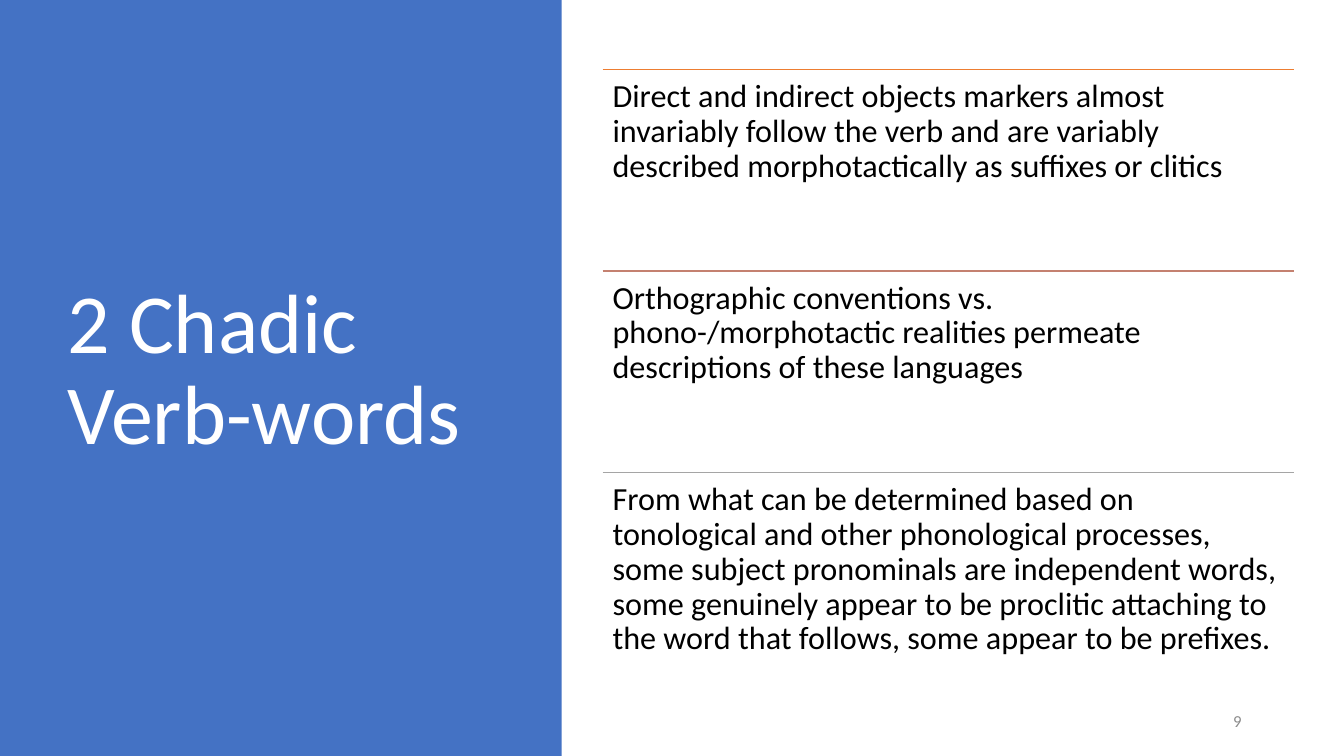
from dataclasses import dataclass

from lxml.etree import SubElement
from pptx import Presentation
from pptx.dml.color import RGBColor
from pptx.enum.shapes import MSO_CONNECTOR, MSO_SHAPE
from pptx.enum.text import MSO_ANCHOR, PP_ALIGN
from pptx.oxml.ns import qn
from pptx.slide import Slide
from pptx.util import Emu, Pt

EMU_PER_PX = 9525  # 96 px to the inch
SLIDE_W, SLIDE_H = 1280, 720

BLUE = RGBColor(0x44, 0x72, 0xC4)
ORANGE = RGBColor(0xED, 0x7D, 0x31)
CLAY = RGBColor(0xC4, 0x81, 0x70)
GREY = RGBColor(0xA5, 0xA5, 0xA5)
NUMBER_GREY = RGBColor(0x8C, 0x8C, 0x8C)
WHITE = RGBColor(0xFF, 0xFF, 0xFF)
BLACK = RGBColor(0x00, 0x00, 0x00)

PANEL_W = 535
POINT_X, POINT_Y, POINT_W, POINT_H = 574, 66, 658, 192


@dataclass
class Box:
    x: int
    y: int
    w: int
    h: int


@dataclass
class Style:
    size: int
    color: RGBColor
    frame: dict
    paragraph: dict


@dataclass
class Point:
    rule_color: RGBColor
    text: str


def px(n: int) -> Emu:
    return Emu(n * EMU_PER_PX)


TITLE = Style(60, WHITE, {"vertical_anchor": MSO_ANCHOR.MIDDLE},
              {"line_spacing": 0.9})
NUMBER = Style(12, NUMBER_GREY, {"vertical_anchor": MSO_ANCHOR.MIDDLE},
               {"alignment": PP_ALIGN.RIGHT, "space_after": Pt(6)})
BODY = Style(23, BLACK,
             {"vertical_anchor": MSO_ANCHOR.TOP,
              "margin_top": px(10), "margin_bottom": px(10)},
             {"line_spacing": 0.9, "space_after": Pt(8)})

POINTS = [
    Point(ORANGE, "Direct and indirect objects markers almost invariably follow "
                  "the verb and are variably described morphotactically as "
                  "suffixes or clitics"),
    Point(CLAY, "Orthographic conventions vs. phono-/morphotactic realities "
                "permeate descriptions of these languages"),
    Point(GREY, "From what can be determined based on tonological and other "
                "phonological processes, some subject pronominals are "
                "independent words, some genuinely appear to be proclitic "
                "attaching to the word that follows, some appear to be prefixes."),
]


def apply(target: object, values: dict) -> None:
    for name, value in values.items():
        setattr(target, name, value)


def add_text(s: Slide, box: Box, text: str, style: Style) -> None:
    sp = s.shapes.add_textbox(px(box.x), px(box.y), px(box.w), px(box.h))
    tf = sp.text_frame
    apply(tf, {"word_wrap": True, **style.frame})
    p = tf.paragraphs[0]
    apply(p, style.paragraph)
    r = p.add_run()
    r.text = text
    apply(r.font, {"name": "Calibri", "size": Pt(style.size)})
    r.font.color.rgb = style.color


def add_rule(s: Slide, x: int, y: int, w: int, color: RGBColor) -> None:
    line = s.shapes.add_connector(
        MSO_CONNECTOR.STRAIGHT, px(x), px(y), px(x + w), px(y))
    line.line.color.rgb = color
    line.line.width = Pt(1)
    SubElement(line._element.spPr, qn("a:effectLst"))


def add_panel(s: Slide, box: Box, color: RGBColor) -> None:
    sp = s.shapes.add_shape(
        MSO_SHAPE.RECTANGLE, px(box.x), px(box.y), px(box.w), px(box.h))
    sp.shadow.inherit = False
    sp.fill.solid()
    sp.fill.fore_color.rgb = color
    sp.line.fill.background()


def main() -> None:
    prs = Presentation()
    apply(prs, {"slide_width": px(SLIDE_W), "slide_height": px(SLIDE_H)})
    s = prs.slides.add_slide(prs.slide_layouts[6])

    # Title panel and slide number
    add_panel(s, Box(0, 0, PANEL_W, SLIDE_H), BLUE)
    add_text(s, Box(55, 65, 399, 578), "2 Chadic Verb-words", TITLE)
    add_text(s, Box(904, 667, 288, 38), "9", NUMBER)

    # Stacked points, each under its own rule
    for i, point in enumerate(POINTS):
        y = POINT_Y + i * POINT_H
        add_rule(s, POINT_X, y, POINT_W, point.rule_color)
        add_text(s, Box(POINT_X, y, POINT_W, POINT_H), point.text, BODY)

    prs.save("out.pptx")


if __name__ == "__main__":
    main()
